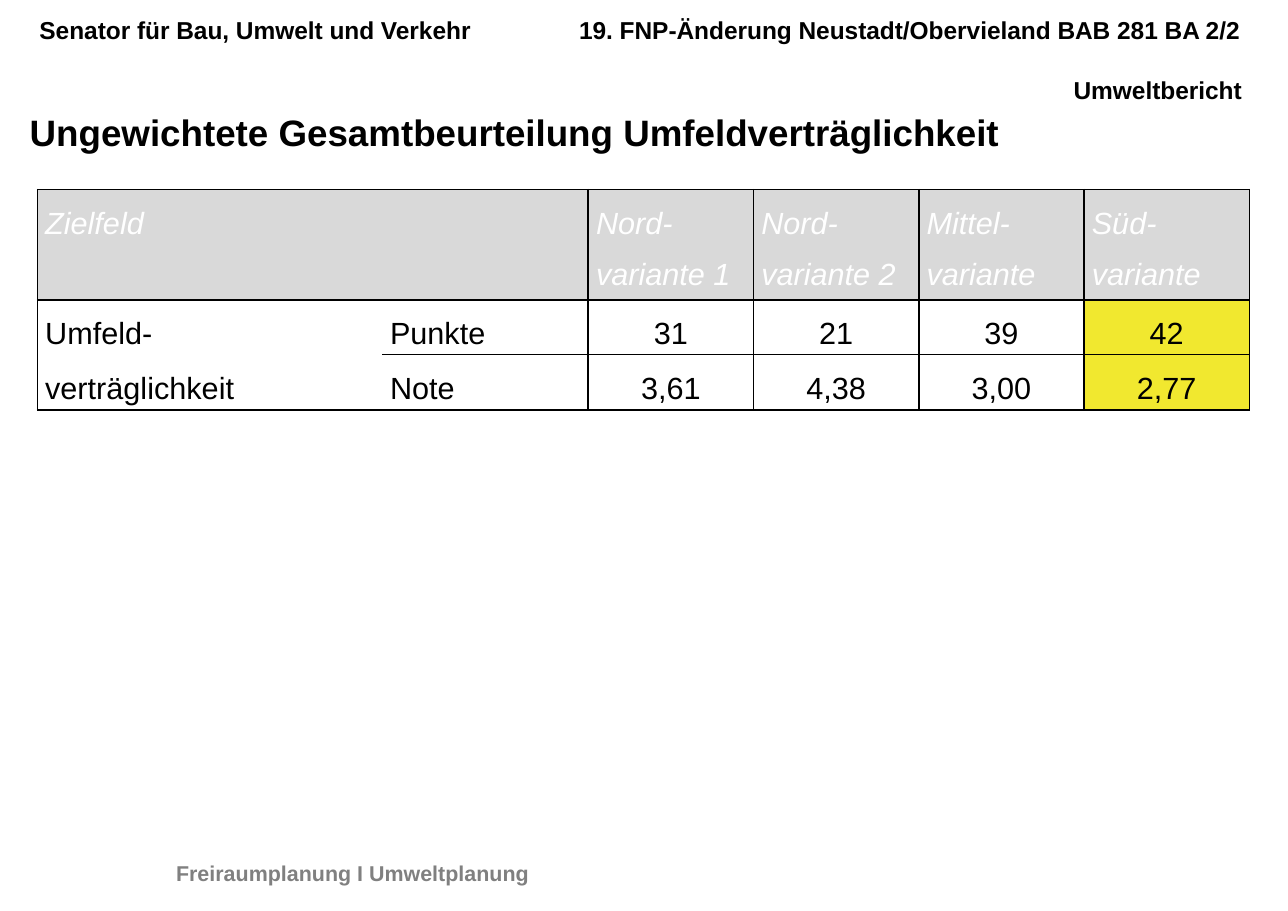
from lxml import etree
from pptx import Presentation
from pptx import util as u
from pptx.dml.color import RGBColor
from pptx.enum import text
from pptx.oxml import ns

HUES = {"ink": "000000", "white": "FFFFFF", "grey": "808080",
        "head": "D9D9D9", "best": "F1E82F"}
ALIGN = text.PP_ALIGN


def style(para, hue, align=ALIGN.LEFT, **form):
    """Set alignment, colour and font values of one paragraph."""
    para.alignment = align
    for key, val in {"name": "Arial", **form}.items():
        setattr(para.font, key, val)
    para.font.color.rgb = RGBColor.from_string(HUES[hue])


def border(cell, side, width):
    """Draw one cell edge; a width of 0 leaves it open."""
    line = etree.SubElement(cell._tc.get_or_add_tcPr(), ns.qn(f"a:ln{side}"))
    line.set("w", str(u.Pt(width)))
    if width:
        fill = etree.SubElement(line, ns.qn("a:solidFill"))
        etree.SubElement(fill, ns.qn("a:srgbClr")).set("val", HUES["ink"])
    else:
        etree.SubElement(line, ns.qn("a:noFill"))


deck = Presentation()
deck.slide_width, deck.slide_height = u.Inches(11.69), u.Inches(8.27)
slide = deck.slides.add_slide(deck.slide_layouts[5])

# Title
title = slide.shapes.title
place = {"left": 0.16, "top": 0.94, "width": 11.17, "height": 0.52}
for key, val in place.items():
    setattr(title, key, u.Inches(val))
frame = title.text_frame
frame.text = "Ungewichtete Gesamtbeurteilung Umfeldverträglichkeit"
frame.auto_size = text.MSO_AUTO_SIZE.NONE
insets = {"margin_left": 0.11, "margin_right": 0.11,
          "margin_top": 0.06, "margin_bottom": 0.06}
for key, val in insets.items():
    setattr(frame, key, u.Inches(val))
style(frame.paragraphs[0], "ink", size=u.Pt(24), bold=True)

# Page header: the first line is split by a right tab
head = slide.shapes.add_textbox(
    u.Inches(0.26), u.Inches(0.09), u.Inches(11.11), u.Inches(0.9)).text_frame
head.word_wrap = True
head.text = ("Senator für Bau, Umwelt und Verkehr\t"
             "19. FNP-Änderung Neustadt/Obervieland BAB 281 BA 2/2\n"
             "Umweltbericht")
first, last = head.paragraphs
tabs = etree.SubElement(first._p.get_or_add_pPr(), ns.qn("a:tabLst"))
tab = etree.SubElement(tabs, ns.qn("a:tab"))
tab.set("pos", str(u.Inches(10.9)))
tab.set("algn", "r")
style(first, "ink", size=u.Pt(16), bold=True)
style(last, "ink", ALIGN.RIGHT, size=u.Pt(16), bold=True)
last.space_before = u.Pt(20)

# Page footer
foot = slide.shapes.add_textbox(
    u.Inches(1.5), u.Inches(7.76), u.Inches(3.47), u.Inches(0.34)).text_frame
foot.word_wrap = False
foot.text = "Freiraumplanung I Umweltplanung"
style(foot.paragraphs[0], "grey", size=u.Pt(14), bold=True)

# Table of scores
ROWS = [
    ["Zielfeld", "", "Nord-\vvariante 1", "Nord-\vvariante 2",
     "Mittel-\vvariante", "Süd-\vvariante"],
    ["Umfeld-", "Punkte", "31", "21", "39", "42"],
    ["verträglichkeit", "Note", "3,61", "4,38", "3,00", "2,77"],
]
WIDE = [3.13, 1.87, 1.5, 1.5, 1.5, 1.5]
HIGH = [1, 0.5, 0.5]
UPRIGHT = [1, 0, 1.5, 1, 1, 1, 1]
LEVEL = [1, 1.5, 1, 1]

table = slide.shapes.add_table(
    len(ROWS), len(WIDE), u.Inches(0.34), u.Inches(1.72),
    u.Inches(sum(WIDE)), u.Inches(sum(HIGH))).table
table.first_row = table.horz_banding = False
for col, wide in zip(table.columns, WIDE):
    col.width = u.Inches(wide)
for row, high in zip(table.rows, HIGH):
    row.height = u.Inches(high)

for r, words in enumerate(ROWS):
    for c, word in enumerate(words):
        cell = table.cell(r, c)
        cell.margin_left = cell.margin_right = u.Inches(0.07)
        cell.margin_top = cell.margin_bottom = 0
        # The two left cells below the header read as one
        level = [0 if c == 0 and n == 2 else w for n, w in enumerate(LEVEL)]
        edges = {"L": UPRIGHT[c], "R": UPRIGHT[c + 1],
                 "T": level[r], "B": level[r + 1]}
        for side, width in edges.items():
            border(cell, side, width)
        hue = "head" if r == 0 else "best" if c == 5 else None
        if hue:
            cell.fill.solid()
            cell.fill.fore_color.rgb = RGBColor.from_string(HUES[hue])
        else:
            cell.fill.background()
        cell.text = word
        para = cell.text_frame.paragraphs[0]
        para.line_spacing = 1.5
        style(para, "ink" if r else "white",
              ALIGN.CENTER if r and c > 1 else ALIGN.JUSTIFY,
              size=u.Pt(20), italic=r == 0)

deck.save("out.pptx")
